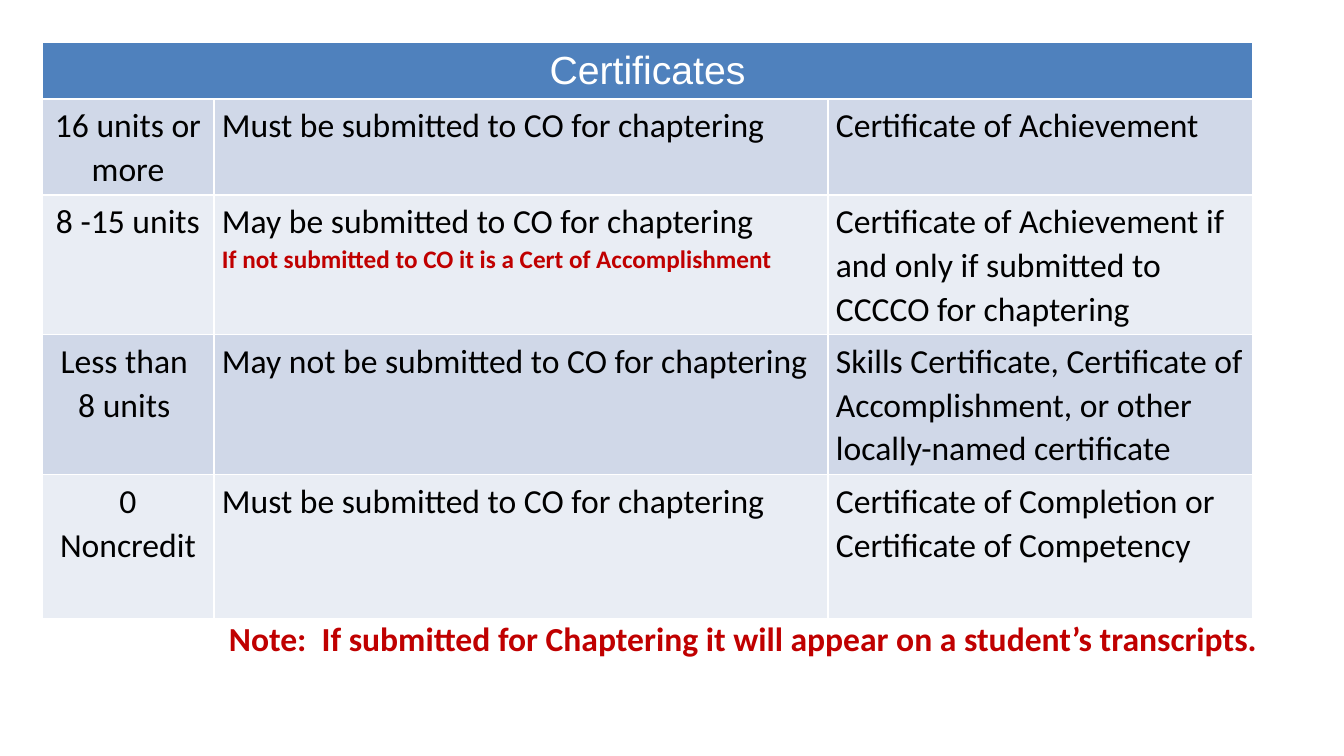
from lxml.etree import SubElement
from pptx import Presentation
from pptx.dml.color import RGBColor as RGB
from pptx.enum.text import MSO_AUTO_SIZE as Auto, PP_ALIGN as Align
from pptx.oxml.ns import qn
from pptx.util import Emu, Pt

WHITE = RGB(0xFF, 0xFF, 0xFF)
BLACK = RGB(0, 0, 0)
RED = RGB(0xC0, 0, 0)
BLUE = RGB(0x4F, 0x81, 0xBD)
BANDS = RGB(0xD0, 0xD8, 0xE8), RGB(0xE9, 0xED, 0xF4)

WIDTHS = 172, 614, 425
HEIGHTS = 57, 96, 139, 140, 144
TITLE = "Certificates"
RULES = [
    ("16 units or more", "Must be submitted to CO for chaptering",
     "Certificate of Achievement"),
    ("8 -15 units",
     "May be submitted to CO for chaptering\v"
     "If not submitted to CO it is a Cert of Accomplishment",
     "Certificate of Achievement if and only if submitted to CCCCO for chaptering"),
    ("Less than \v8 units ", "May not be submitted to CO for chaptering",
     "Skills Certificate, Certificate of Accomplishment, "
     "or other locally-named certificate"),
    ("0 Noncredit", "Must be submitted to CO for chaptering",
     "Certificate of Completion or Certificate of Competency"),
]
NOTE = "Note:  If submitted for Chaptering it will appear on a student’s transcripts."


def px(count):
    return Emu(round(count * 914400 / 100.8))


class Deck:
    font = "Calibri"
    size = 24

    def __init__(self):
        self.prs = Presentation()
        self.prs.slide_width, self.prs.slide_height = px(1344), px(756)
        self.slide = self.prs.slides.add_slide(self.prs.slide_layouts[6])

    def style(self, run, color=BLACK, size=None, font=None, bold=False):
        run.font.name = font or self.font
        run.font.size = Pt(size or self.size)
        run.font.bold = bold
        run.font.color.rgb = color

    def grid(self, left, top, widths, heights):
        frame = self.slide.shapes.add_table(
            len(heights), len(widths), px(left), px(top),
            px(sum(widths)), px(sum(heights)))
        table = frame.table
        table.first_row = table.horz_banding = False
        for col, width in zip(table.columns, widths):
            col.width = px(width)
        for row, height in zip(table.rows, heights):
            row.height = px(height)
        return table

    def border(self, cell):
        props = cell._tc.get_or_add_tcPr()
        for side in ("lnL", "lnR", "lnT", "lnB"):
            line = SubElement(props, qn("a:" + side), w=str(Pt(1)))
            fill = SubElement(line, qn("a:solidFill"))
            SubElement(fill, qn("a:srgbClr"), val=str(WHITE))

    def cell(self, cell, text, fill, align=Align.LEFT, **look):
        self.border(cell)
        cell.fill.solid()
        cell.fill.fore_color.rgb = fill
        cell.margin_left = cell.margin_right = px(8)
        cell.margin_top = cell.margin_bottom = px(4)
        cell.text_frame.text = text
        para = cell.text_frame.paragraphs[0]
        para.alignment = align
        para.line_spacing = 1.07
        para.space_after = Pt(6)
        for run in para.runs:
            self.style(run, **look)
        return para

    def text(self, left, top, width, height, text, **look):
        box = self.slide.shapes.add_textbox(px(left), px(top), px(width), px(height))
        frame = box.text_frame
        frame.word_wrap = True
        frame.auto_size = Auto.SHAPE_TO_FIT_TEXT
        frame.text = text
        self.style(frame.paragraphs[0].runs[0], **look)


def main():
    deck = Deck()
    table = deck.grid(42, 42, WIDTHS, HEIGHTS)
    table.cell(0, 0).merge(table.cell(0, 2))
    deck.cell(table.cell(0, 0), TITLE, BLUE, Align.CENTER,
              color=WHITE, size=28, font="Arial")
    for row, rule in enumerate(RULES, 1):
        for col, text in enumerate(rule):
            align = Align.LEFT if col else Align.CENTER
            para = deck.cell(table.cell(row, col), text, BANDS[(row - 1) % 2], align)
            if col == 1:
                for run in para.runs[1:]:
                    deck.style(run, RED, 18, bold=True)
    deck.text(219, 613, 1099, 50, NOTE, color=RED, bold=True)
    deck.prs.save("out.pptx")


if __name__ == "__main__":
    main()
